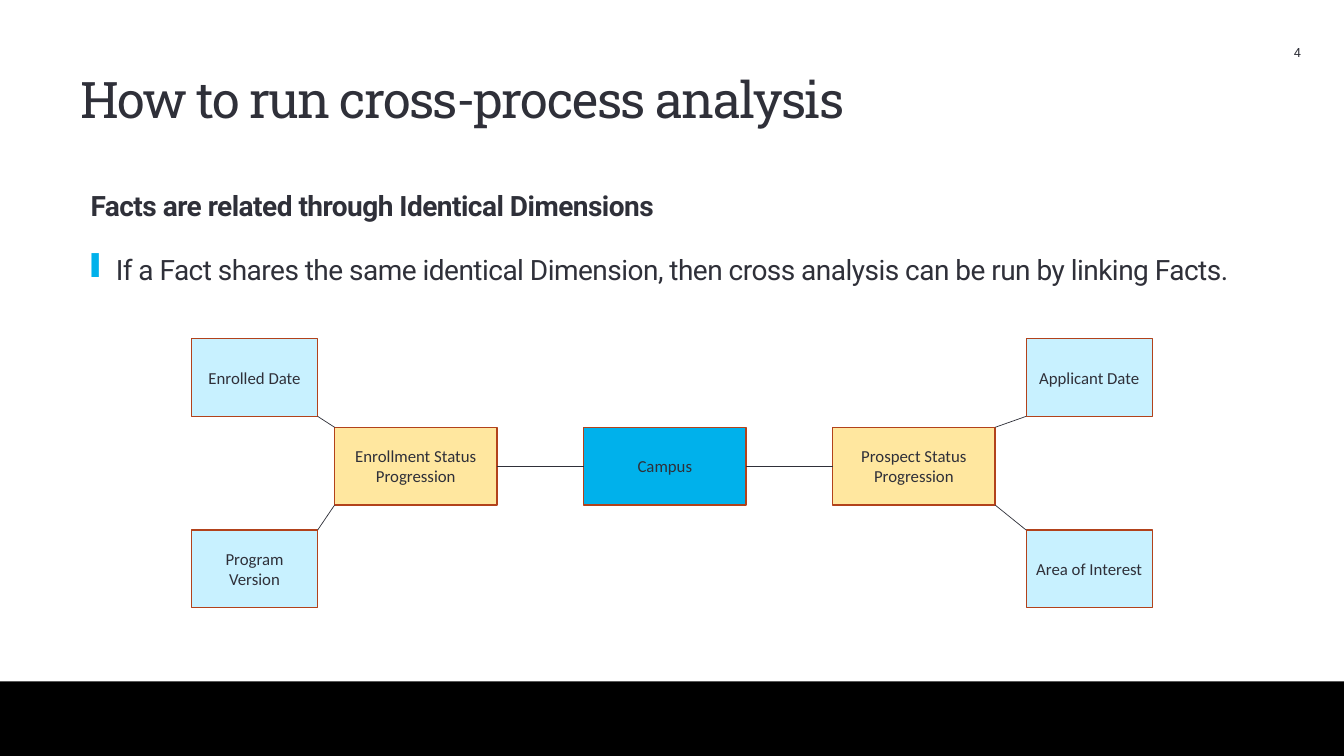
"""Build the slide on cross-process analysis; lengths are percentages of the slide's size."""
import dataclasses
import typing

import lxml.etree
import pptx
import pptx.dml.color
import pptx.enum.shapes
import pptx.enum.text
import pptx.oxml.ns
import pptx.util

ALIGN = pptx.enum.text.PP_ALIGN
ANCHOR = pptx.enum.text.MSO_ANCHOR
WIDTH, HEIGHT = pptx.util.Inches(13.33), pptx.util.Inches(7.5)
INK, EDGE, ACCENT, FACT, DIMENSION = "2F3039", "B2421B", "00B1EB", "FFE79F", "C8F1FF"
FACT_LEFT, FACT_STEP, FACT_WIDTH = 24.9, 18.53, 12.08
OUTER_LEFT, OUTER_RIGHT, OUTER_WIDTH = 14.25, 76.36, 9.38
TOP_ROW, MIDDLE_ROW, BOTTOM_ROW, ROW_HEIGHT = 44.8, 56.53, 70.13, 10.27


@dataclasses.dataclass(frozen=True)
class Area:
    """A rectangle in percentages of the slide."""
    left: float
    top: float
    width: float
    height: float

    def place(self) -> tuple[int, int, int, int]:
        """Return left, top, width and height in slide units."""
        return (*point(self.left, self.top), *point(self.width, self.height))

    def spot(self, across: float, down: float) -> tuple[int, int]:
        """Return the point at the given shares of the rectangle."""
        return point(self.left + across * self.width, self.top + down * self.height)


@dataclasses.dataclass(frozen=True)
class Node:
    """A labelled box of the diagram."""
    label: str
    area: Area
    fill: str


@dataclasses.dataclass(frozen=True)
class Link:
    """A line between spots on two nodes."""
    start: Node
    start_spot: tuple[float, float]
    end: Node
    end_spot: tuple[float, float]


def fact_area(index: int) -> Area:
    """Return the area of a box in the middle row."""
    return Area(FACT_LEFT + index * FACT_STEP, MIDDLE_ROW, FACT_WIDTH, ROW_HEIGHT)


def outer_area(left: float, top: float) -> Area:
    """Return the area of a box in an outer column."""
    return Area(left, top, OUTER_WIDTH, ROW_HEIGHT)


ENROLLMENT = Node("Enrollment Status Progression", fact_area(0), FACT)
CAMPUS = Node("Campus", fact_area(1), ACCENT)
PROSPECT = Node("Prospect Status Progression", fact_area(2), FACT)
ENROLLED = Node("Enrolled Date", outer_area(OUTER_LEFT, TOP_ROW), DIMENSION)
PROGRAM = Node("Program Version", outer_area(OUTER_LEFT, BOTTOM_ROW), DIMENSION)
APPLICANT = Node("Applicant Date", outer_area(OUTER_RIGHT, TOP_ROW), DIMENSION)
INTEREST = Node("Area of Interest", outer_area(OUTER_RIGHT, BOTTOM_ROW), DIMENSION)
NODES = (ENROLLMENT, PROSPECT, ENROLLED, PROGRAM, CAMPUS, APPLICANT, INTEREST)
LINKS = (
    Link(ENROLLED, (1, 1), ENROLLMENT, (0, 0)),
    Link(PROGRAM, (1, 0), ENROLLMENT, (0, 1)),
    Link(ENROLLMENT, (1, 0.5), CAMPUS, (0, 0.5)),
    Link(CAMPUS, (1, 0.5), PROSPECT, (0, 0.5)),
    Link(PROSPECT, (1, 0), APPLICANT, (0, 1)),
    Link(PROSPECT, (1, 1), INTEREST, (0, 0)),
)


def point(across: float, down: float) -> tuple[int, int]:
    """Turn percentages of the slide into slide units."""
    return round(WIDTH * across / 100), round(HEIGHT * down / 100)


def color(value: str) -> pptx.dml.color.RGBColor:
    """Turn a hex string into a colour."""
    return pptx.dml.color.RGBColor.from_string(value)


def write(para: typing.Any, text: str, *, size: float, font: str, bold: bool = False,
          tracking: int = 0, align: typing.Any = None, spacing: float = 1.0) -> None:
    """Write one formatted run into a paragraph; tracking is in hundredths of a point."""
    para.alignment = align
    para.line_spacing = spacing
    span = para.add_run()
    span.text = text
    span.font.size = pptx.util.Pt(size)
    span.font.name = font
    span.font.bold = bold
    span.font.color.rgb = color(INK)
    if tracking:
        span._r.get_or_add_rPr().set("spc", str(tracking))


def add_bullet(para: typing.Any, mark: str) -> None:
    """Give a paragraph a coloured bullet and a hanging indent."""
    props = para._p.get_or_add_pPr()
    indent = pptx.util.Inches(0.25)
    props.set("marL", str(indent))
    props.set("indent", str(-indent))
    name = pptx.oxml.ns.qn
    tint = lxml.etree.SubElement(props, name("a:buClr"))
    lxml.etree.SubElement(tint, name("a:srgbClr"), val=ACCENT)
    lxml.etree.SubElement(props, name("a:buSzPct"), val="120000")
    lxml.etree.SubElement(props, name("a:buChar"), char=mark)


def add_block(page: typing.Any, area: Area, fill: str, edge: str | None = None) -> typing.Any:
    """Add a plain rectangle, outlined when an edge colour is given."""
    box = page.shapes.add_shape(pptx.enum.shapes.MSO_SHAPE.RECTANGLE, *area.place())
    box.shadow.inherit = False
    box.fill.solid()
    box.fill.fore_color.rgb = color(fill)
    if edge:
        box.line.color.rgb = color(edge)
        box.line.width = pptx.util.Pt(1)
    else:
        box.line.fill.background()
    return box


def add_node(page: typing.Any, node: Node) -> None:
    """Add a box of the diagram with its label."""
    frame = add_block(page, node.area, node.fill, EDGE).text_frame
    frame.word_wrap = True
    frame.vertical_anchor = ANCHOR.MIDDLE
    write(frame.paragraphs[0], node.label, size=12, font="Calibri", align=ALIGN.CENTER)


def add_link(page: typing.Any, link: Link) -> None:
    """Add a thin line between two boxes."""
    line = page.shapes.add_connector(
        pptx.enum.shapes.MSO_CONNECTOR.STRAIGHT,
        *link.start.area.spot(*link.start_spot), *link.end.area.spot(*link.end_spot))
    line.line.color.rgb = color(INK)
    line.line.width = pptx.util.Pt(0.5)
    lxml.etree.SubElement(line._element.spPr, pptx.oxml.ns.qn("a:effectLst"))


def add_text_box(page: typing.Any, area: Area) -> typing.Any:
    """Add a wrapping text box and return its frame."""
    frame = page.shapes.add_textbox(*area.place()).text_frame
    frame.word_wrap = True
    return frame


def add_title(page: typing.Any) -> None:
    """Move and fill the title placeholder."""
    title = page.shapes.title
    title.left, title.top, title.width, title.height = Area(6, 9.87, 89.72, 10.13).place()
    frame = title.text_frame
    frame.margin_left = frame.margin_right = frame.margin_top = frame.margin_bottom = 0
    frame.vertical_anchor = ANCHOR.TOP
    frame.auto_size = pptx.enum.text.MSO_AUTO_SIZE.NONE
    write(frame.paragraphs[0], "How to run cross-process analysis", size=36,
          font="Roboto Slab", tracking=-120, align=ALIGN.LEFT, spacing=0.9)


def add_body(page: typing.Any) -> None:
    """Add the heading and its bullet point."""
    frame = add_text_box(page, Area(6, 22, 88.07, 15.33))
    write(frame.paragraphs[0], "Facts are related through Identical Dimensions", size=20,
          font="Roboto", bold=True, tracking=-40, spacing=1.5)
    para = frame.add_paragraph()
    para.space_before = pptx.util.Pt(10)
    add_bullet(para, "❙")
    write(para, "If a Fact shares the same identical Dimension, then cross analysis "
          "can be run by linking Facts.", size=20, font="Roboto", tracking=-40, spacing=1.5)


def main() -> None:
    """Build and save the deck."""
    deck = pptx.Presentation()
    deck.slide_width, deck.slide_height = WIDTH, HEIGHT
    page = deck.slides.add_slide(deck.slide_layouts.get_by_name("Title Only"))
    add_block(page, Area(0, 90.13, 100, 9.87), "000000")
    add_title(page)
    number = add_text_box(page, Area(75.02, 4.27, 22.51, 5.33))
    number.vertical_anchor = ANCHOR.MIDDLE
    write(number.paragraphs[0], "4", size=9, font="Roboto", align=ALIGN.RIGHT)
    add_body(page)
    for node in NODES:
        add_node(page, node)
    for link in LINKS:
        add_link(page, link)
    deck.save("out.pptx")


if __name__ == "__main__":
    main()
